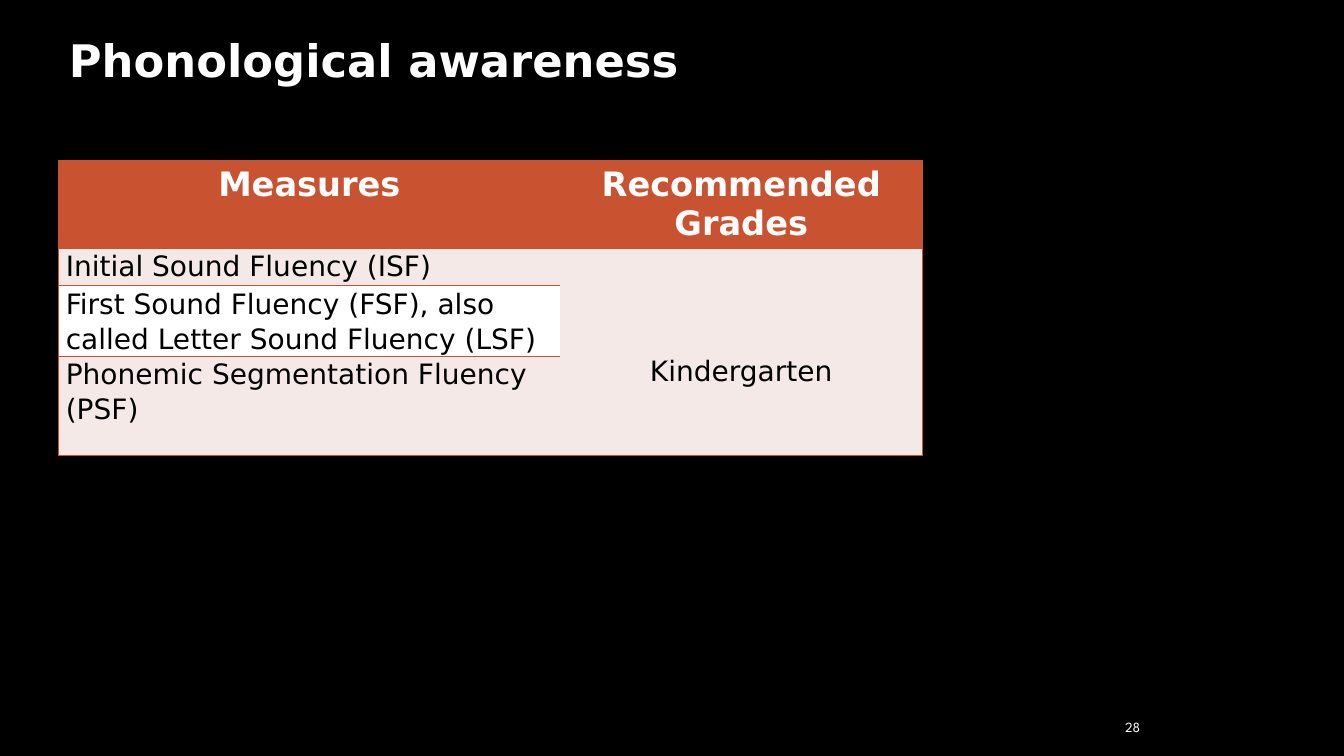
from dataclasses import dataclass

from lxml import etree
from pptx import Presentation
from pptx.dml.color import RGBColor
from pptx.enum import text as t
from pptx.oxml import ns
from pptx.util import Pt

COLORS = {"black": "000000", "white": "FFFFFF", "rust": "C95331", "blush": "F5E9E8"}
BODY_FONT = "DejaVu Sans"
NUMBER_FONT = "League Spartan"
NO_GRID_STYLE = "{2D5ABB26-0587-4C30-8999-92F81FD0307C}"
COLUMN_WIDTHS = (358, 259)
ROW_HEIGHTS = (63, 26.6, 50.4, 70.6)
BORDER_SIDES = (("L", "T", "B"), ("R", "T", "B"))


@dataclass(frozen=True)
class RunStyle:
    size: float
    color: str
    bold: bool = False
    font: str = BODY_FONT


@dataclass(frozen=True)
class Entry:
    row: int
    column: int
    words: str
    fill: str
    style: RunStyle
    centered: bool = False
    spacing: float = 1.0
    margins: tuple[float, float] = (5, 0)
    anchor: t.MSO_ANCHOR = t.MSO_ANCHOR.TOP


HEADING = RunStyle(24, "white", True)
BODY = RunStyle(20, "black")

ENTRIES = [
    Entry(0, 0, "Measures", "rust", HEADING, True, margins=(7.2, 3.6)),
    Entry(0, 1, "Recommended Grades", "rust", HEADING, True, margins=(7.2, 3.6)),
    Entry(1, 0, "Initial Sound Fluency (ISF)", "blush", BODY, spacing=1.07),
    Entry(2, 0, "First Sound Fluency (FSF), also called Letter Sound Fluency (LSF)",
          "white", BODY, spacing=1.07),
    Entry(3, 0, "Phonemic Segmentation Fluency (PSF)", "blush", BODY, spacing=1.07),
    Entry(1, 1, "Kindergarten", "blush", BODY, True, 1.07, (5, 26),
          t.MSO_ANCHOR.MIDDLE),
]


def rgb(name: str) -> RGBColor:
    return RGBColor.from_string(COLORS[name])


def add_run(paragraph, words: str, style: RunStyle) -> None:
    run = paragraph.add_run()
    run.text = words
    run.font.name = style.font
    run.font.size = Pt(style.size)
    run.font.bold = style.bold
    run.font.color.rgb = rgb(style.color)


def set_margins(frame, side: float, edge: float) -> None:
    frame.margin_left = frame.margin_right = Pt(side)
    frame.margin_top = frame.margin_bottom = Pt(edge)


def add_borders(cell, sides: tuple[str, ...]) -> None:
    properties = cell._tc.get_or_add_tcPr()
    for index, side in enumerate(sides):
        line = etree.Element(ns.qn(f"a:ln{side}"), w=str(Pt(1)))
        fill = etree.SubElement(line, ns.qn("a:solidFill"))
        etree.SubElement(fill, ns.qn("a:srgbClr"), val=COLORS["rust"])
        properties.insert(index, line)


def fill_cell(table, entry: Entry) -> None:
    cell = table.cell(entry.row, entry.column)
    set_margins(cell, entry.margins[0], entry.margins[1])
    if entry.anchor == t.MSO_ANCHOR.MIDDLE:
        cell.margin_bottom = Pt(0)
    cell.vertical_anchor = entry.anchor
    paragraph = cell.text_frame.paragraphs[0]
    paragraph.alignment = t.PP_ALIGN.CENTER if entry.centered else t.PP_ALIGN.LEFT
    paragraph.line_spacing = entry.spacing
    add_run(paragraph, entry.words, entry.style)
    cell.fill.solid()
    cell.fill.fore_color.rgb = rgb(entry.fill)


def add_title(slide) -> None:
    title = slide.shapes.title
    title.left, title.top, title.width, title.height = Pt(42), Pt(16), Pt(684), Pt(57.6)
    frame = title.text_frame
    frame.word_wrap = True
    frame.auto_size = t.MSO_AUTO_SIZE.NONE
    frame.vertical_anchor = t.MSO_ANCHOR.TOP
    set_margins(frame, 7.2, 3.6)
    paragraph = frame.paragraphs[0]
    paragraph.alignment = t.PP_ALIGN.LEFT
    paragraph.line_spacing = 1.1
    add_run(paragraph, "Phonological awareness", RunStyle(32, "white", True))


def add_measures(slide) -> None:
    frame = slide.shapes.add_table(
        len(ROW_HEIGHTS), len(COLUMN_WIDTHS), Pt(42), Pt(114.5),
        Pt(sum(COLUMN_WIDTHS)), Pt(sum(ROW_HEIGHTS)))
    table = frame.table
    table._tbl.tblPr.find(ns.qn("a:tableStyleId")).text = NO_GRID_STYLE
    table.first_row = table.horz_banding = False
    for column, width in zip(table.columns, COLUMN_WIDTHS):
        column.width = Pt(width)
    for row, height in zip(table.rows, ROW_HEIGHTS):
        row.height = Pt(height)

    # One grade spans all three measures
    table.cell(1, 1).merge(table.cell(3, 1))
    for entry in ENTRIES:
        fill_cell(table, entry)
    for row in table.rows:
        for cell, sides in zip(row.cells, BORDER_SIDES):
            add_borders(cell, sides)


def add_page_number(slide) -> None:
    number = slide.shapes.add_textbox(Pt(795), Pt(513.4), Pt(26.6), Pt(12.2))
    frame = number.text_frame
    frame.word_wrap = True
    frame.vertical_anchor = t.MSO_ANCHOR.MIDDLE
    set_margins(frame, 7.2, 0)
    paragraph = frame.paragraphs[0]
    paragraph.alignment = t.PP_ALIGN.RIGHT
    add_run(paragraph, "28", RunStyle(10, "white", font=NUMBER_FONT))


def main() -> None:
    deck = Presentation()
    deck.slide_width, deck.slide_height = Pt(960), Pt(540)
    slide = deck.slides.add_slide(deck.slide_layouts[5])
    slide.background.fill.solid()
    slide.background.fill.fore_color.rgb = rgb("black")
    add_title(slide)
    add_measures(slide)
    add_page_number(slide)
    deck.save("out.pptx")


if __name__ == "__main__":
    main()
